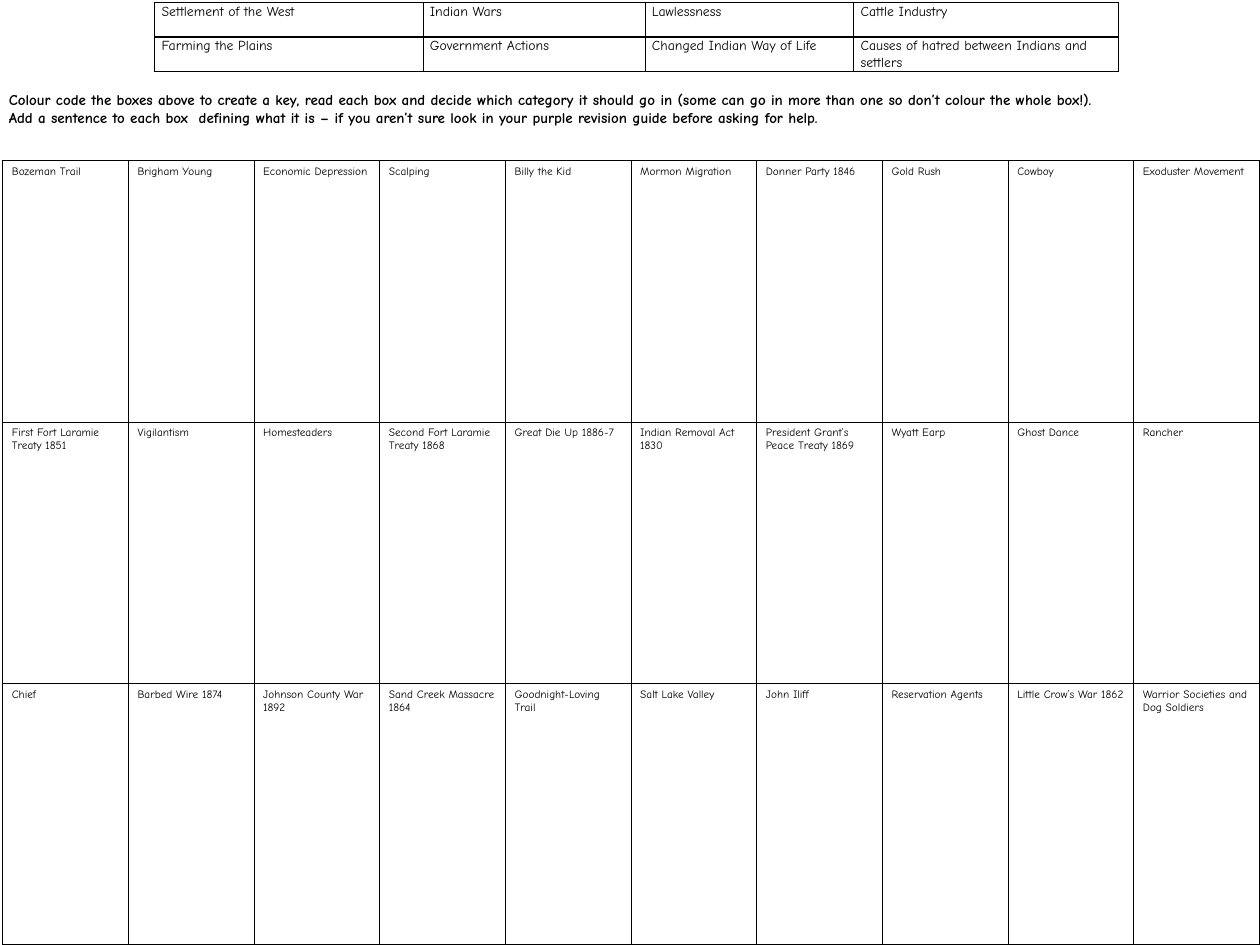
from dataclasses import dataclass

from lxml.etree import SubElement
from pptx import Presentation
from pptx.dml.color import RGBColor
from pptx.enum.text import MSO_AUTO_SIZE
from pptx.oxml.ns import qn
from pptx.util import Cm, Pt


@dataclass(frozen=True)
class Theme:
    font: str = "Comic Neue"
    ink: str = "000000"
    paper: str = "FFFFFF"
    key_size: int = 11
    instruction_size: int = 12
    topic_size: int = 9
    border: int = 1


@dataclass(frozen=True)
class Box:
    left: float
    top: float
    width: float
    height: float

    def lengths(self):
        return Cm(self.left), Cm(self.top), Cm(self.width), Cm(self.height)


THEME = Theme()

CATEGORIES = [
    ["Settlement of the West", "Indian Wars", "Lawlessness", "Cattle Industry"],
    ["Farming the Plains", "Government Actions", "Changed Indian Way of Life",
     "Causes of hatred between Indians and settlers"],
]
CATEGORY_WIDTHS = [7.57, 6.27, 5.89, 7.47]

INSTRUCTIONS = [
    "Colour code the boxes above to create a key, read each box and decide which category "
    "it should go in (some can go in more than one so don’t colour the whole box!).",
    "Add a sentence to each box  defining what it is – if you aren’t sure look in your "
    "purple revision guide before asking for help.",
]

TOPICS = [
    ["Bozeman Trail", "Brigham Young", "Economic Depression", "Scalping", "Billy the Kid",
     "Mormon Migration", "Donner Party 1846", "Gold Rush", "Cowboy", "Exoduster Movement"],
    ["First Fort Laramie Treaty 1851", "Vigilantism", "Homesteaders",
     "Second Fort Laramie Treaty 1868", "Great Die Up 1886-7", "Indian Removal Act 1830",
     "President Grant’s Peace Treaty 1869", "Wyatt Earp", "Ghost Dance", "Rancher"],
    ["Chief", "Barbed Wire 1874", "Johnson County War 1892", "Sand Creek Massacre 1864",
     "Goodnight-Loving Trail", "Salt Lake Valley", "John Iliff", "Reservation Agents",
     "Little Crow’s War 1862", "Warrior Societies and Dog Soldiers"],
]


def apply_format(target, values):
    for name, value in values.items():
        setattr(target, name, value)


def write(paragraph, wording, size, bold=False):
    paragraph.text = wording
    apply_format(paragraph.font, {"name": THEME.font, "size": Pt(size), "bold": bold})
    paragraph.font.color.rgb = RGBColor.from_string(THEME.ink)


def outline(cell):
    properties = cell._tc.get_or_add_tcPr()
    for side in ("lnL", "lnR", "lnT", "lnB"):
        edge = SubElement(properties, qn(f"a:{side}"), w=str(Pt(THEME.border)))
        ink = SubElement(edge, qn("a:solidFill"))
        SubElement(ink, qn("a:srgbClr"), val=THEME.ink)


def add_grid(slide, box, entries, widths, size, cell_format, line_spacing=None):
    grid = slide.shapes.add_table(len(entries), len(widths), *box.lengths()).table
    apply_format(grid, {"first_row": False, "horz_banding": False})
    for column, width in zip(grid.columns, widths):
        column.width = Cm(width)
    for row, wordings in zip(grid.rows, entries):
        row.height = Cm(box.height / len(entries))
        for cell, wording in zip(row.cells, wordings):
            apply_format(cell, cell_format)
            outline(cell)
            cell.fill.solid()
            cell.fill.fore_color.rgb = RGBColor.from_string(THEME.paper)
            paragraph = cell.text_frame.paragraphs[0]
            write(paragraph, wording, size)
            paragraph.line_spacing = line_spacing


def add_category_key(slide, box):
    margins = {"margin_left": Cm(0.19), "margin_right": Cm(0.19),
               "margin_top": 0, "margin_bottom": 0}
    add_grid(slide, box, CATEGORIES, CATEGORY_WIDTHS, THEME.key_size, margins, 1.07)


def add_instructions(slide, box):
    frame = slide.shapes.add_textbox(*box.lengths()).text_frame
    apply_format(frame, {"word_wrap": True, "auto_size": MSO_AUTO_SIZE.SHAPE_TO_FIT_TEXT})
    for index, sentence in enumerate(INSTRUCTIONS):
        paragraph = frame.add_paragraph() if index else frame.paragraphs[0]
        write(paragraph, sentence, THEME.instruction_size, bold=True)


def add_topic_grid(slide, box):
    count = len(TOPICS[0])
    add_grid(slide, box, TOPICS, [box.width / count] * count, THEME.topic_size, {})


def main():
    deck = Presentation()
    apply_format(deck, {"slide_width": Cm(35.56), "slide_height": Cm(26.67)})
    slide = deck.slides.add_slide(deck.slide_layouts[6])
    add_topic_grid(slide, Box(0.08, 4.54, 35.48, 22.12))
    add_category_key(slide, Box(4.37, 0.07, sum(CATEGORY_WIDTHS), 1.95))
    add_instructions(slide, Box(0, 2.44, 35.56, 1.28))
    deck.save("out.pptx")


if __name__ == "__main__":
    main()
